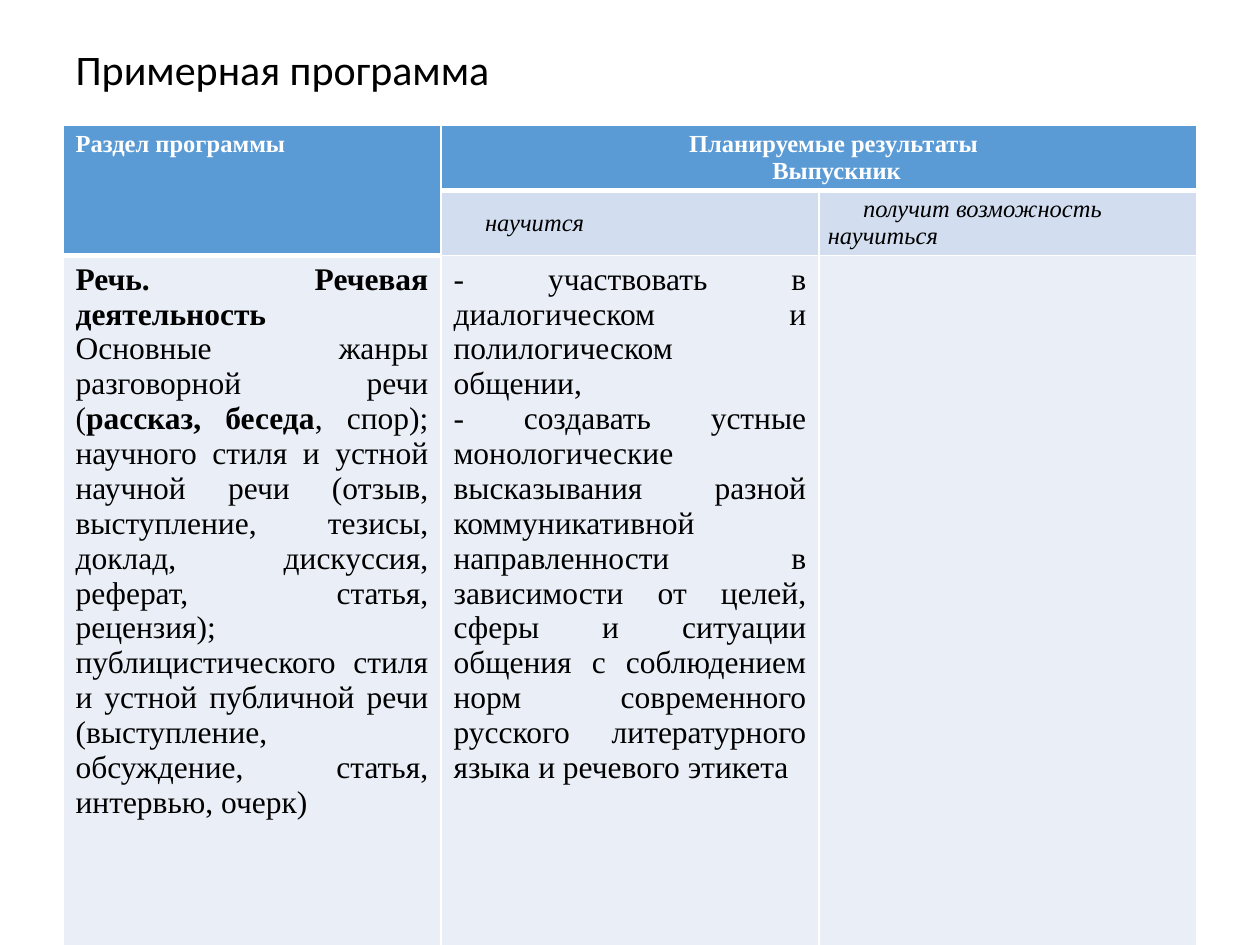
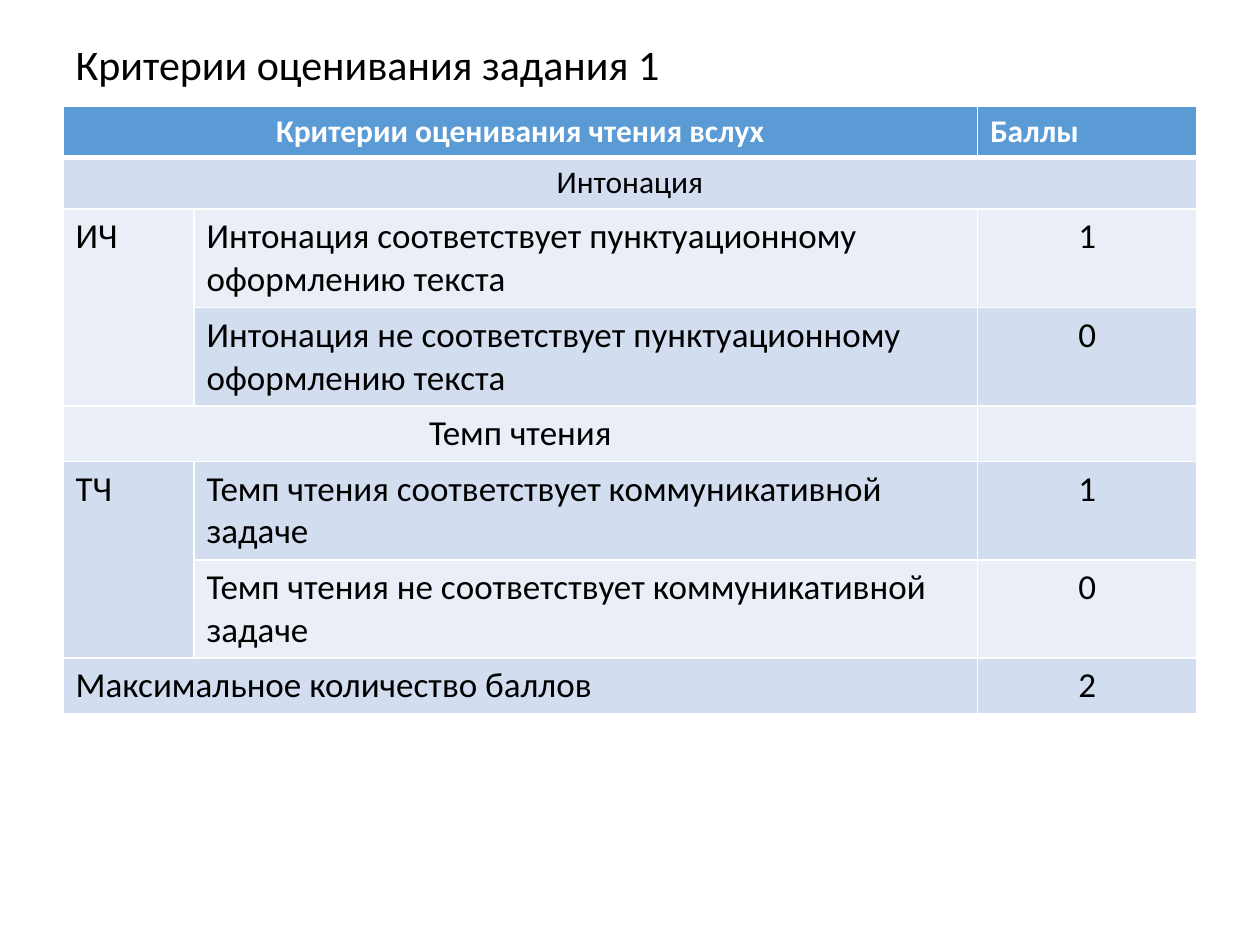
from lxml.etree import SubElement
from pptx import Presentation
from pptx.dml.color import RGBColor
from pptx.enum.text import MSO_ANCHOR, MSO_AUTO_SIZE, PP_ALIGN
from pptx.oxml.ns import qn
from pptx.util import Inches, Pt

COLORS = {"header": "5B9BD5", "odd": "D2DEEF", "even": "EAEFF7",
          "light": "FFFFFF", "dark": "000000"}
SANS, SERIF = "Calibri", "Times New Roman"
LEFT, WIDTH = 0.5, 9
CENTER, JUSTIFY = PP_ALIGN.CENTER, PP_ALIGN.JUSTIFY
INDENTED = {"indent": 0.28, "anchor": MSO_ANCHOR.MIDDLE}
SPEECH = {"size": 18, "align": JUSTIFY}
LABEL = {"size": 20}
SCORE = {"size": 20, "align": CENTER}

PROGRAM = {
    (0, 0): ("Раздел программы", (2, 1), {}),
    (0, 1): ("Планируемые результаты \nВыпускник", (1, 2), {**INDENTED, "align": CENTER}),
    (1, 1): ("научится", (1, 1), {**INDENTED, "italic": True}),
    (1, 2): ("получит возможность научиться", (1, 1), {**INDENTED, "italic": True}),
    (2, 0): ("**Речь. Речевая деятельность**\n"
             "Основные жанры разговорной речи (**рассказ, беседа**, спор); научного стиля "
             "и устной научной речи (отзыв, выступление, тезисы, доклад, дискуссия, реферат, "
             "статья, рецензия); публицистического стиля и устной публичной речи "
             "(выступление, обсуждение, статья, интервью, очерк)", (1, 1), SPEECH),
    (2, 1): ("- участвовать в диалогическом и полилогическом общении, \n"
             "- создавать устные монологические высказывания разной коммуникативной "
             "направленности в зависимости от целей, сферы и ситуации общения с соблюдением "
             "норм современного русского литературного языка и речевого этикета",
             (1, 1), SPEECH),
}

CRITERIA = {
    (0, 0): ("Критерии оценивания чтения вслух", (1, 2), {"align": CENTER}),
    (0, 2): ("Баллы", (1, 1), {}),
    (1, 0): ("Интонация", (1, 3), {"align": CENTER}),
    (2, 0): ("ИЧ", (2, 1), LABEL),
    (2, 1): ("Интонация соответствует пунктуационному оформлению текста", (1, 1), LABEL),
    (2, 2): ("1", (1, 1), SCORE),
    (3, 1): ("Интонация не соответствует пунктуационному оформлению текста", (1, 1), LABEL),
    (3, 2): ("0", (1, 1), SCORE),
    (4, 0): ("Темп чтения", (1, 2), SCORE),
    (5, 0): ("ТЧ", (2, 1), LABEL),
    (5, 1): ("Темп чтения соответствует коммуникативной задаче", (1, 1), LABEL),
    (5, 2): ("1", (1, 1), SCORE),
    (6, 1): ("Темп чтения не соответствует коммуникативной задаче", (1, 1), LABEL),
    (6, 2): ("0", (1, 1), SCORE),
    (7, 0): ("Максимальное количество баллов", (1, 2), LABEL),
    (7, 2): ("2", (1, 1), SCORE),
}


def rgb(value):
    """Turn a hex string into a colour."""
    return RGBColor.from_string(value)


def set_attrs(obj, values):
    """Set attributes of an object from a dict."""
    for name, value in values.items():
        setattr(obj, name, value)


def format_run(r, color, **font):
    """Give a run its font values and colour."""
    set_attrs(r.font, font)
    r.font.color.rgb = rgb(color)


def add_title(slide, text, height):
    """Place and fill the slide title."""
    sp = slide.shapes.title
    set_attrs(sp, {"left": Inches(LEFT), "top": Inches(0.3),
                   "width": Inches(WIDTH), "height": Inches(height)})
    tf = sp.text_frame
    set_attrs(tf, {"word_wrap": True, "auto_size": MSO_AUTO_SIZE.NONE,
                   "vertical_anchor": MSO_ANCHOR.MIDDLE})
    p = tf.paragraphs[0]
    set_attrs(p, {"alignment": PP_ALIGN.LEFT, "line_spacing": 0.9})
    r = p.add_run()
    r.text = text
    format_run(r, COLORS["dark"], name=SANS, size=Pt(24))


def style_cell(cell, row):
    """Fill a cell by its row band and draw its white borders."""
    band = "header" if row == 0 else ("even", "odd")[row % 2]
    cell.fill.solid()
    cell.fill.fore_color.rgb = rgb(COLORS[band])
    tc_pr = cell._tc.get_or_add_tcPr()
    for i, side in enumerate("LRTB"):
        points = 3 if row == 0 and side == "B" else 1
        ln = SubElement(tc_pr, qn(f"a:ln{side}"), w=str(Pt(points)))
        fill = SubElement(ln, qn("a:solidFill"))
        SubElement(fill, qn("a:srgbClr"), val=COLORS["light"])
        tc_pr.insert(i, ln)


def write_cell(cell, text, header, font, size, align=PP_ALIGN.LEFT,
               indent=0, italic=False, anchor=MSO_ANCHOR.TOP):
    """Write paragraphs into a cell, with bold between double asterisks."""
    cell.vertical_anchor = anchor
    if indent:
        set_attrs(cell, {"margin_left": Inches(0.07), "margin_right": Inches(0.07),
                         "margin_top": 0, "margin_bottom": 0})
    tf = cell.text_frame
    for i, line in enumerate(text.split("\n")):
        p = tf.add_paragraph() if i else tf.paragraphs[0]
        p.alignment = align
        if indent:
            p_pr = p._p.get_or_add_pPr()
            p_pr.set("marL", "0")
            p_pr.set("indent", str(Inches(indent)))
        for j, part in enumerate(line.split("**")):
            if part:
                r = p.add_run()
                r.text = part
                format_run(r, COLORS["light" if header else "dark"], name=font,
                           size=Pt(size), bold=header or j % 2 == 1, italic=italic)


def add_grid(slide, top, cols, rows, cells, font, size):
    """Add a banded table with merged cells."""
    table = slide.shapes.add_table(len(rows), len(cols), Inches(LEFT), Inches(top),
                                   Inches(WIDTH), Inches(sum(rows))).table
    set_attrs(table, {"first_row": False, "horz_banding": False})
    for col, width in zip(table.columns, cols):
        col.width = Inches(width)
    for i, height in enumerate(rows):
        table.rows[i].height = Inches(height)
        for j in range(len(cols)):
            style_cell(table.cell(i, j), i)
    for (i, j), (text, (down, across), values) in cells.items():
        cell = table.cell(i, j)
        if down * across > 1:
            cell.merge(table.cell(i + down - 1, j + across - 1))
        write_cell(cell, text, i == 0, font, **{"size": size, **values})


def main():
    """Build both slides and save them."""
    prs = Presentation()
    set_attrs(prs, {"slide_width": Inches(10), "slide_height": Inches(7.5)})
    layout = prs.slide_layouts[5]

    s = prs.slides.add_slide(layout)
    add_title(s, "Примерная программа", 0.54)
    add_grid(s, 0.99, [3] * 3, [0.52, 0.52, 5.88], PROGRAM, SERIF, 14)

    s = prs.slides.add_slide(layout)
    add_title(s, "Критерии оценивания задания 1", 0.46)
    add_grid(s, 0.84, [1.04, 6.22, 1.74], [0.41] * 8, CRITERIA, SANS, 18)

    prs.save("out.pptx")


if __name__ == "__main__":
    main()
